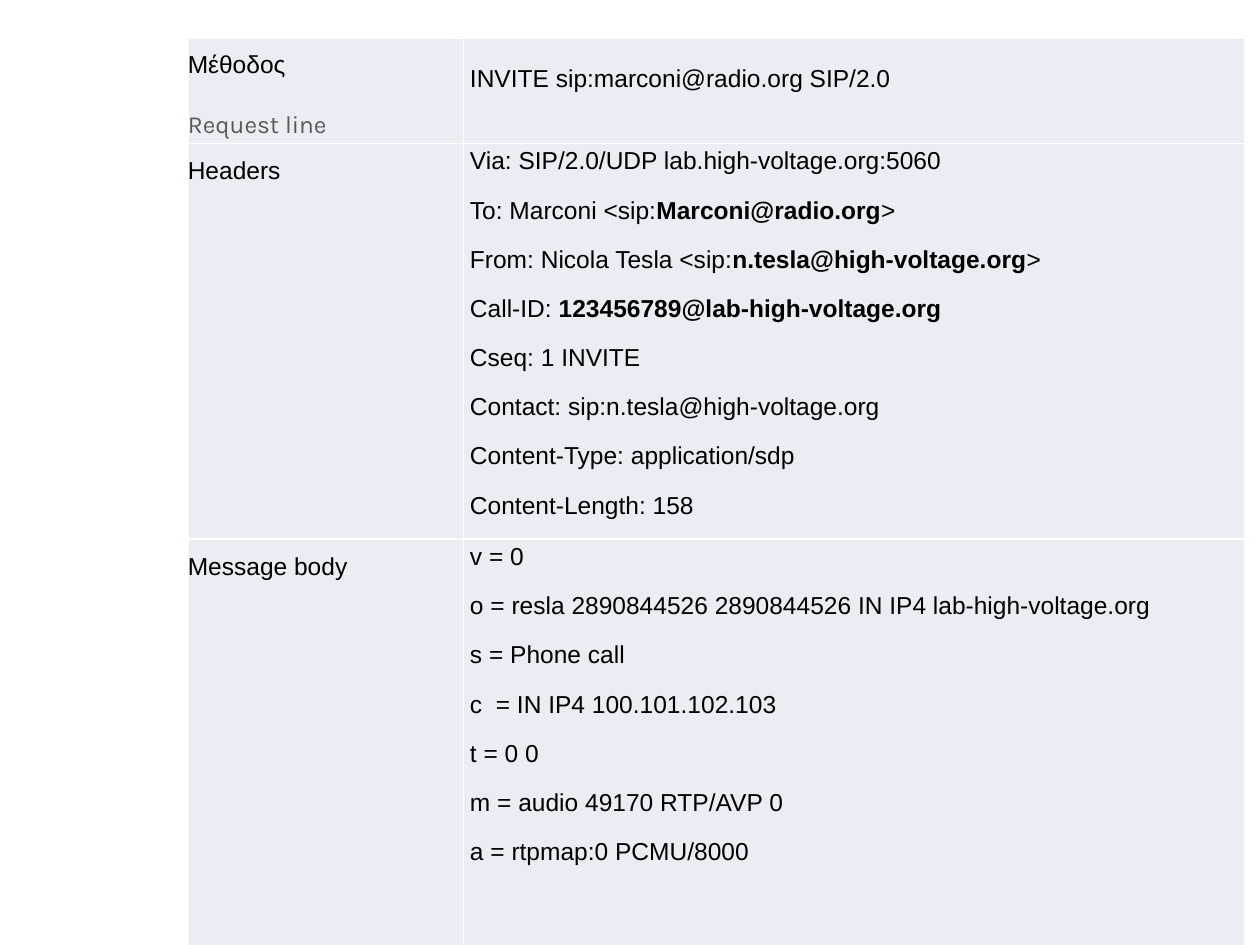
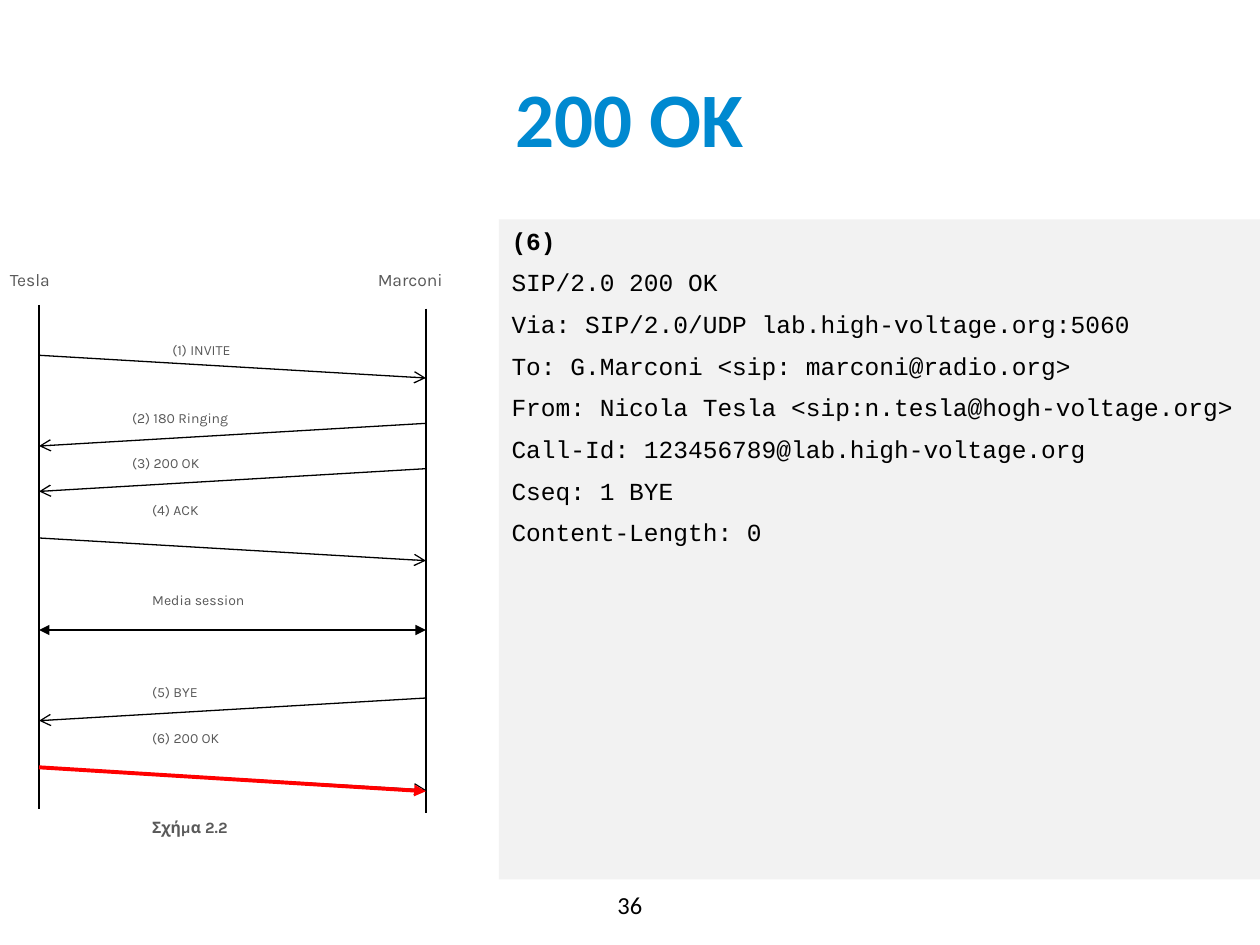
import dataclasses

import lxml.etree
import pptx
import pptx.dml.color
import pptx.enum.shapes
import pptx.enum.text
import pptx.oxml.ns
import pptx.util

Inches = pptx.util.Inches
ALIGN = pptx.enum.text.PP_ALIGN
ANCHOR = pptx.enum.text.MSO_ANCHOR


@dataclasses.dataclass(frozen=True)
class Font:
    face: str
    size: float
    color: str
    bold: bool = False


@dataclasses.dataclass(frozen=True)
class Theme:
    black: str = "000000"
    white: str = "FFFFFF"
    red: str = "FF0000"
    cell: str = "E9EDF4"
    panel: str = "F2F2F2"
    title: Font = Font("Calibri", 44, "0089D0", True)
    number: Font = Font("Calibri", 14, "000000")
    table: Font = Font("Arial", 14, "000000")
    note: Font = Font("Karla", 14, "595959")
    code: Font = Font("Courier New", 14, "000000")
    actor: Font = Font("Karla", 10, "595959")
    label: Font = Font("Karla", 8, "595959")
    figure: Font = Font("Karla", 9, "595959", True)


def tint(code):
    return pptx.dml.color.RGBColor.from_string(code)


def child(parent, tag, **attrs):
    node = lxml.etree.SubElement(parent, pptx.oxml.ns.qn(tag))
    for key, value in attrs.items():
        node.set(key, str(value))
    return node


class Deck:
    """Holds the theme and the slide being built."""

    def __init__(self, theme):
        self.theme = theme
        self.file = pptx.Presentation()
        self.file.slide_width = Inches(10)
        self.file.slide_height = Inches(7.5)
        self.slide = None

    def start(self, layout, number):
        self.slide = self.file.slides.add_slide(self.file.slide_layouts[layout])
        self.text(number, self.theme.number, 0.12, 6.98, 9.76, 0.4,
                  align=ALIGN.CENTER, anchor=ANCHOR.MIDDLE)

    def place(self, shape, left, top, width, height):
        shape.left, shape.top = Inches(left), Inches(top)
        shape.width, shape.height = Inches(width), Inches(height)

    def letter(self, frame, lines, align=None, spacing=None, after=0, before=0):
        """Fill a frame from (text, font) lines; *stars* enclose bold runs."""
        for row, (line, font) in enumerate(lines):
            para = frame.add_paragraph() if row else frame.paragraphs[0]
            para.alignment = align
            para.line_spacing = spacing
            para.space_after = pptx.util.Pt(after)
            para.space_before = pptx.util.Pt(before)
            for part, words in enumerate(line.split("*")):
                if words:
                    run = para.add_run()
                    run.text = words
                    run.font.name = font.face
                    run.font.size = pptx.util.Pt(font.size)
                    run.font.bold = font.bold or part % 2 == 1
                    run.font.color.rgb = tint(font.color)

    def text(self, words, font, left, top, width, height=0.36,
             anchor=ANCHOR.TOP, **style):
        box = self.slide.shapes.add_textbox(0, 0, 0, 0)
        self.place(box, left, top, width, height)
        box.text_frame.word_wrap = True
        box.text_frame.vertical_anchor = anchor
        self.letter(box.text_frame, [(words, font)], **style)

    def title(self, words):
        shape = self.slide.shapes.title
        self.place(shape, 0.5, 0.3, 9, 1.25)
        shape.text_frame.vertical_anchor = ANCHOR.MIDDLE
        self.letter(shape.text_frame, [(words, self.theme.title)], align=ALIGN.CENTER)

    def panel(self, lines, *area):
        shape = self.slide.placeholders[1]
        self.place(shape, *area)
        shape.fill.solid()
        shape.fill.fore_color.rgb = tint(self.theme.panel)
        self.letter(shape.text_frame, [(line, self.theme.code) for line in lines],
                    after=6, before=1)
        for para in shape.text_frame.paragraphs:
            props = para._p.get_or_add_pPr()
            props.set("marL", "0")
            props.set("indent", "0")
            child(props, "a:buNone")

    def line(self, start, end, width, color=None, head=None, tail=None):
        link = self.slide.shapes.add_connector(
            pptx.enum.shapes.MSO_CONNECTOR.STRAIGHT,
            *(Inches(value) for value in (*start, *end)))
        link.line.color.rgb = tint(color or self.theme.black)
        link.line.width = pptx.util.Pt(width)
        props = link._element.spPr
        edge = props.get_or_add_ln()
        for tag, kind in (("a:headEnd", head), ("a:tailEnd", tail)):
            if kind:
                child(edge, tag, type=kind)
        child(props, "a:effectLst")

    def table(self, left, top, widths, heights):
        frame = self.slide.shapes.add_table(
            len(heights), len(widths), Inches(left), Inches(top),
            Inches(sum(widths)), Inches(sum(heights)))
        grid = frame.table
        grid.first_row = grid.horz_banding = False
        for column, width in zip(grid.columns, widths):
            column.width = Inches(width)
        for row, height in zip(grid.rows, heights):
            row.height = Inches(height)
        for cell in grid.iter_cells():
            cell.margin_left = cell.margin_right = 0
            cell.margin_top = cell.margin_bottom = 0
            props = cell._tc.get_or_add_tcPr()
            for side in "LRTB":
                edge = child(props, f"a:ln{side}", w=pptx.util.Pt(1))
                child(child(edge, "a:solidFill"), "a:srgbClr", val=self.theme.white)
            cell.fill.solid()
            cell.fill.fore_color.rgb = tint(self.theme.cell)
        return grid


def invite(deck):
    theme = deck.theme
    deck.start(6, "19")
    title = deck.slide.shapes.title
    if title is not None:
        title._element.getparent().remove(title._element)
    rows = [
        ([("Μέθοδος", theme.table), ("Request line", theme.note)],
         ["INVITE sip:marconi@radio.org SIP/2.0"]),
        ([("Headers", theme.table)],
         ["Via: SIP/2.0/UDP lab.high-voltage.org:5060",
          "To: Marconi <sip:*Marconi@radio.org*>",
          "From: Nicola Tesla <sip:*n.tesla@high-voltage.org*>",
          "Call-ID: *123456789@lab-high-voltage.org*",
          "Cseq: 1 INVITE",
          "Contact: sip:n.tesla@high-voltage.org",
          "Content-Type: application/sdp",
          "Content-Length: 158"]),
        ([("Message body", theme.table)],
         ["v = 0",
          "o = resla 2890844526 2890844526 IN IP4 lab-high-voltage.org",
          "s = Phone call",
          "c  = IN IP4 100.101.102.103",
          "t = 0 0",
          "m = audio 49170 RTP/AVP 0",
          "a = rtpmap:0 PCMU/8000"]),
    ]
    grid = deck.table(1.49, 0.3, (2.19, 6.2), (0.79, 3.14, 3.24))
    for index, (names, lines) in enumerate(rows):
        name, value = grid.cell(index, 0), grid.cell(index, 1)
        deck.letter(name.text_frame, names, spacing=1.5, after=10)
        value.margin_left = Inches(0.05)
        deck.letter(value.text_frame, [(line, theme.table) for line in lines],
                    spacing=1.15, after=10)
    first = grid.cell(0, 1)
    first.vertical_anchor = ANCHOR.BOTTOM
    first.margin_bottom = Inches(0.4)


def reply(deck):
    theme = deck.theme
    deck.start(1, "36")
    deck.title("200 OK")
    deck.panel(["*(6)*",
                "SIP/2.0 200 ΟΚ",
                "Via: SIP/2.0/UDP lab.high-voltage.org:5060",
                "To: G.Marconi <sip: marconi@radio.org>",
                "From: Nicola Tesla <sip:n.tesla@hogh-voltage.org>",
                "Call-Id: 123456789@lab.high-voltage.org",
                "Cseq: 1 BYE",
                "Content-Length: 0"], 3.96, 1.74, 6.28, 5.24)

    tesla, marconi, drop = 0.31, 3.38, 0.18
    for name, left, pole, top in (("Tesla", -0.02, tesla, 2.42),
                                  ("Marconi", 2.9, marconi, 2.45)):
        deck.text(name, theme.actor, left, 2.06, 0.97, spacing=1.15)
        deck.line((pole, top), (pole, top + 4), 1.5)

    # label, its left and top, height of the arrow's start, sent by Tesla
    calls = [("(1) INVITE", 1.27, 2.64, 2.82, True),
             ("(2) 180 Ringing", 0.95, 3.18, 3.36, False),
             ("(3) 200 OK", 0.95, 3.54, 3.72, False),
             ("(4) ACK", 1.11, 3.91, 4.27, True),
             ("(5) BYE", 1.11, 5.36, 5.54, False),
             ("(6) 200 OK", 1.11, 5.72, 6.09, True)]
    for label, left, top, level, sent in calls:
        deck.text(label, theme.label, left, top, 1.46, spacing=1.15)
        start, end = (tesla, marconi) if sent else (marconi, tesla)
        deck.line((start, level), (end, level + drop), 0.75, tail="arrow")

    deck.text("Media session", theme.label, 1.11, 4.63, 1.46, spacing=1.15)
    deck.line((tesla, 5), (marconi, 5), 1.5, head="triangle", tail="triangle")
    deck.text("Σχήμα 2.2", theme.figure, 1.11, 6.42, 1.13, spacing=1.15)
    deck.line((tesla, 6.09), (marconi, 6.28), 2.25, theme.red, tail="triangle")


def main():
    deck = Deck(Theme())
    invite(deck)
    reply(deck)
    deck.file.save("out.pptx")


if __name__ == "__main__":
    main()
